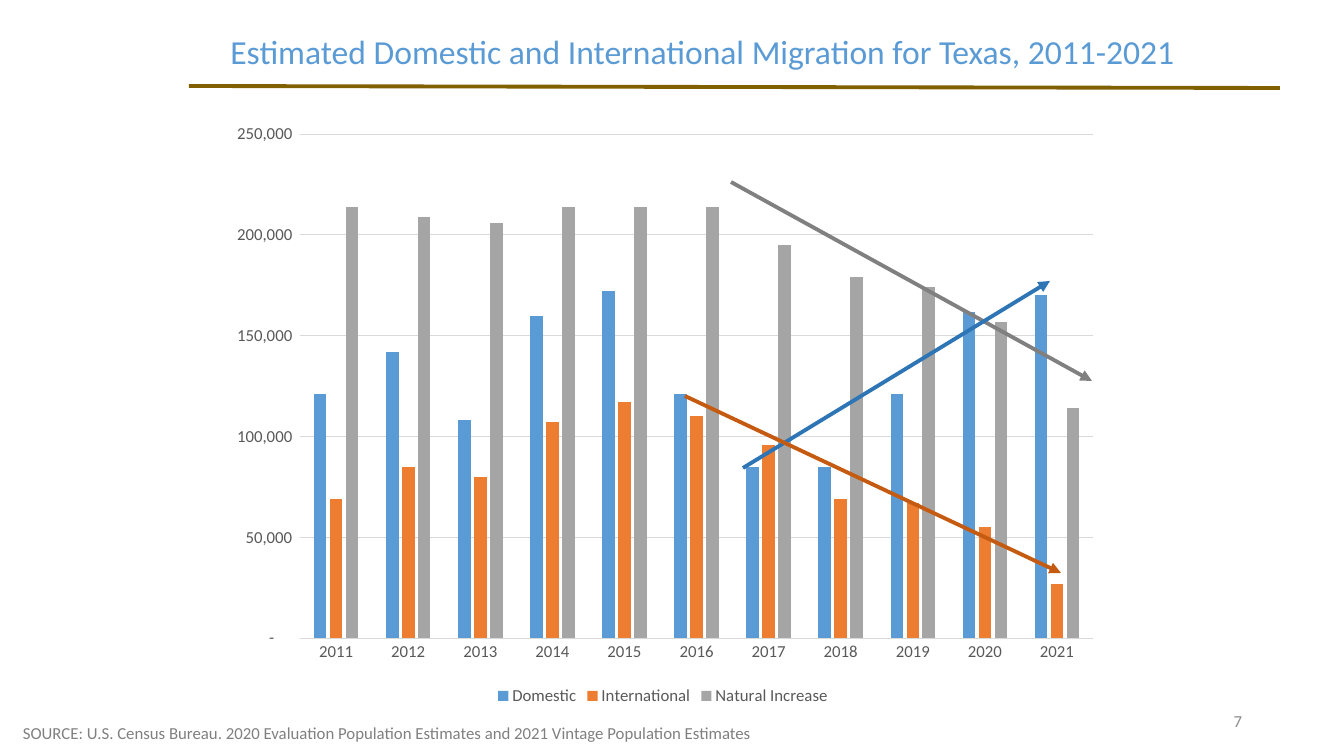
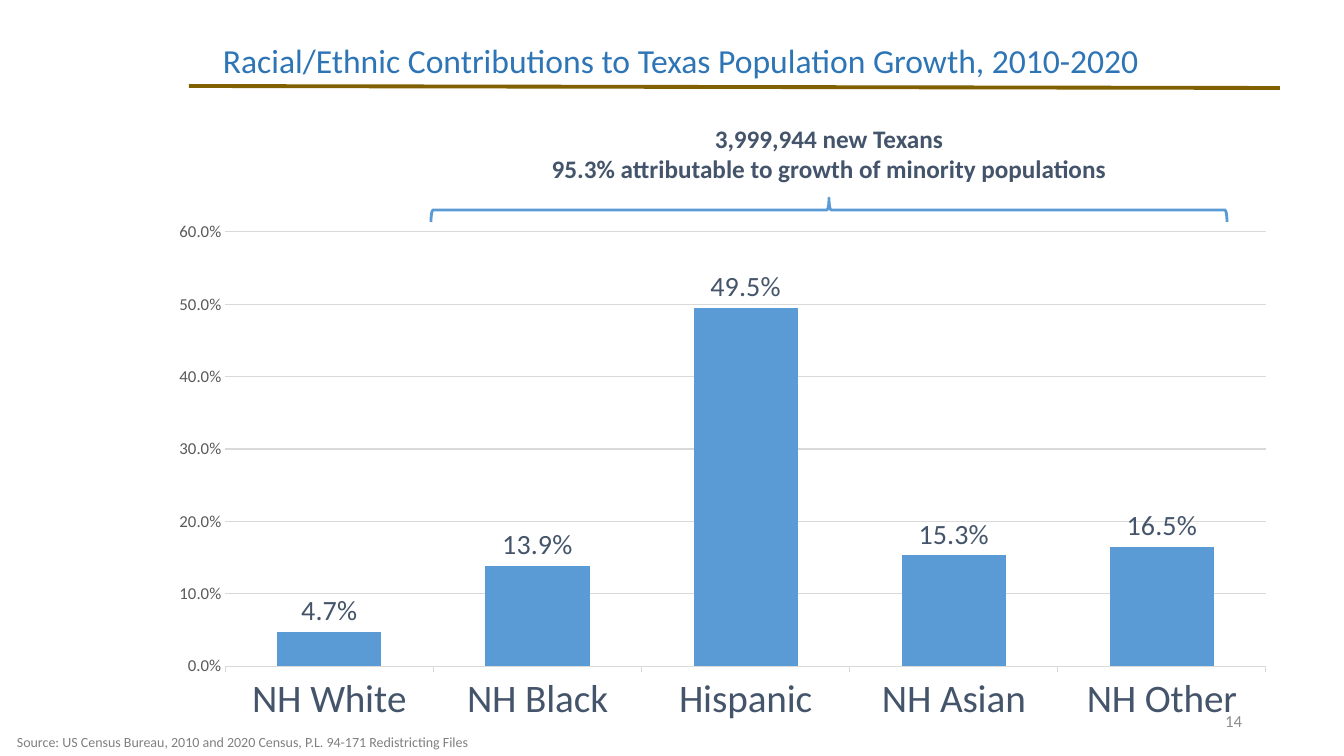
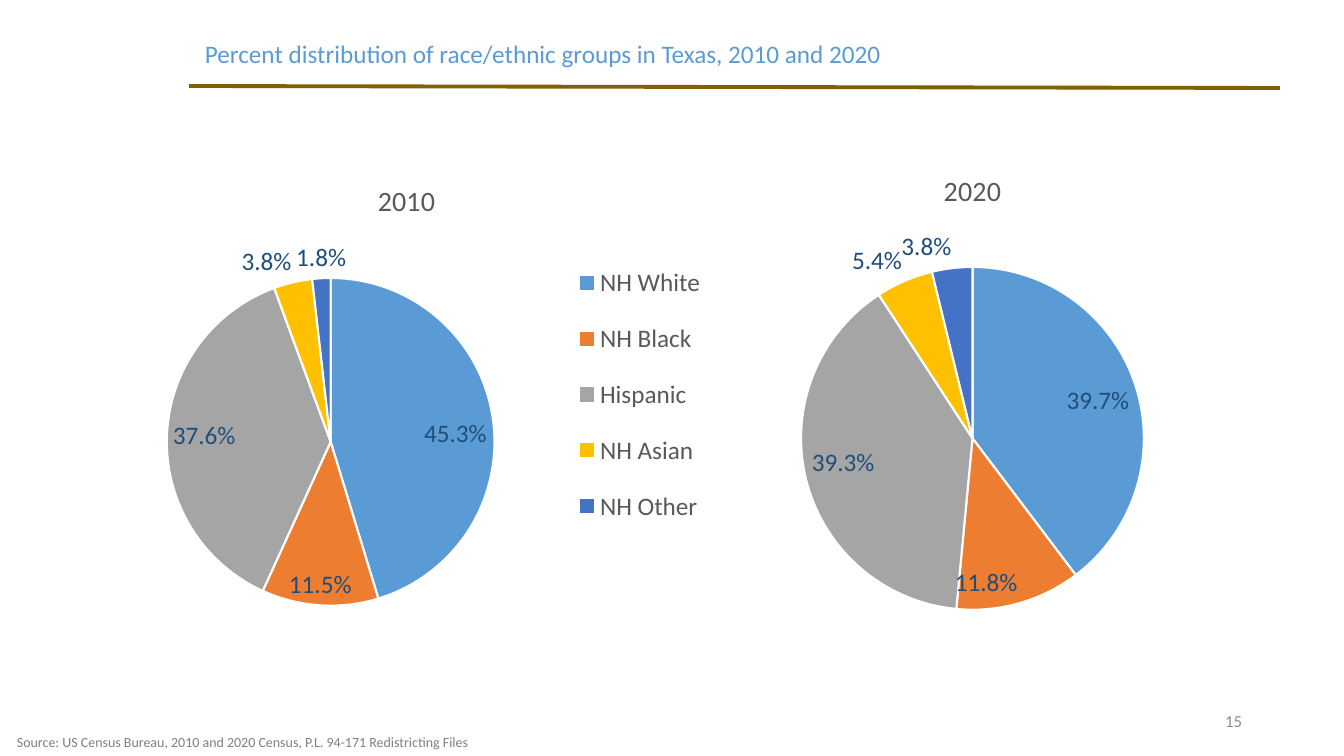
from lxml import etree
from pptx import Presentation
from pptx.chart.data import CategoryChartData
from pptx.dml.color import RGBColor
from pptx.enum.chart import XL_CHART_TYPE as CT, XL_LABEL_POSITION as LP
from pptx.enum.chart import XL_LEGEND_POSITION as LEG, XL_TICK_MARK as TICK
from pptx.enum.shapes import MSO_CONNECTOR, MSO_SHAPE
from pptx.enum.text import MSO_ANCHOR, PP_ALIGN
from pptx.oxml.ns import qn
from pptx.util import Pt

# Scale and theme
W, H = 1344, 756
EMU = 12192000 / W
FONT = "Calibri"
WHITE = RGBColor(0xFF, 0xFF, 0xFF)
BLUE = RGBColor(0x5B, 0x9B, 0xD5)
ORANGE = RGBColor(0xED, 0x7D, 0x31)
GRAY = RGBColor(0xA5, 0xA5, 0xA5)
YELLOW = RGBColor(0xFF, 0xC0, 0x00)
INDIGO = RGBColor(0x44, 0x72, 0xC4)
DEEP_BLUE = RGBColor(0x2E, 0x75, 0xB6)
NAVY = RGBColor(0x1F, 0x4E, 0x79)
RUST = RGBColor(0xC5, 0x5A, 0x11)
OLIVE = RGBColor(0x80, 0x60, 0x00)
SLATE = RGBColor(0x44, 0x54, 0x6A)
INK = RGBColor(0x59, 0x59, 0x59)
NOTE = RGBColor(0x80, 0x80, 0x80)
NUMBER = RGBColor(0x8C, 0x8C, 0x8C)
GRID = RGBColor(0xD9, 0xD9, 0xD9)

# Content
YEARS = [str(y) for y in range(2011, 2022)]
MIGRATION = [
    ("Domestic", BLUE, [121000, 142000, 108000, 160000, 172000, 121000,
                        85000, 85000, 121000, 162000, 170000]),
    ("International", ORANGE, [69000, 85000, 80000, 107000, 117000, 110000,
                               96000, 69000, 67000, 55000, 27000]),
    ("Natural Increase", GRAY, [214000, 209000, 206000, 214000, 214000, 214000,
                                195000, 179000, 174000, 157000, 114000]),
]
TRENDS = [((731, 182), (1092, 381), NOTE),
          ((743, 468), (1050, 281), DEEP_BLUE),
          ((685, 396), (1061, 573), RUST)]
GROUPS = ["NH White", "NH Black", "Hispanic", "NH Asian", "NH Other"]
GROUP_COLORS = [BLUE, ORANGE, GRAY, YELLOW, INDIGO]
GROWTH = [("Share of growth", BLUE, [0.047, 0.139, 0.495, 0.153, 0.165])]
# year, shares, chart box, pie box
PIES = [
    ("2010", [0.453, 0.115, 0.376, 0.038, 0.018], (92, 161, 629, 495), (167, 278, 328, 328)),
    ("2020", [0.397, 0.118, 0.393, 0.054, 0.038], (680, 150, 585, 506), (801, 267, 343, 343)),
]
PIE_LEGEND = (565, 242, 150, 305)
CALLOUT = ["3,999,944 new Texans",
           "95.3% attributable to growth of minority populations"]
CENSUS = "Source: US Census Bureau, 2010 and 2020 Census, P.L. 94-171 Redistricting Files"
VINTAGE = ("SOURCE: U.S. Census Bureau. 2020 Evaluation Population Estimates "
           "and 2021 Vintage Population Estimates")
COUNT = '_(* #,##0_);_(* \\(#,##0\\);_(* "-"??_);_(@_)'
PERCENT = "0.0%"


def px(*lengths):
    return [round(n * EMU) for n in lengths]


def set_font(font, size, color, bold=False):
    font.name, font.size, font.bold = FONT, Pt(size), bold
    font.color.rgb = color


def text(s, box, lines, size, color, align=PP_ALIGN.LEFT, bold=False,
         spacing=None, anchor=MSO_ANCHOR.TOP):
    tf = s.shapes.add_textbox(*px(*box)).text_frame
    tf.word_wrap, tf.vertical_anchor = True, anchor
    for i, line in enumerate(lines):
        p = tf.add_paragraph() if i else tf.paragraphs[0]
        p.alignment, p.line_spacing = align, spacing
        r = p.add_run()
        r.text = line
        set_font(r.font, size, color, bold)


def line(s, start, end, color, arrow=False):
    c = s.shapes.add_connector(MSO_CONNECTOR.STRAIGHT, *px(*start, *end))
    c.line.color.rgb, c.line.width = color, Pt(2.75)
    if arrow:
        etree.SubElement(c.line._get_or_add_ln(), qn("a:tailEnd"), type="triangle")
    etree.SubElement(c._element.spPr, qn("a:effectLst"))


def new_slide(prs, title, title_box, size, color, number, source, source_box,
              align=PP_ALIGN.LEFT):
    s = prs.slides.add_slide(prs.slide_layouts[6])
    line(s, (189, 86), (1280, 88), OLIVE)
    text(s, title_box, [title], size, color, align, spacing=0.9)
    text(s, source_box, [source], 12 if source == VINTAGE else 10, NOTE)
    text(s, (950, 701, 302, 40), [number], 12, NUMBER, PP_ALIGN.RIGHT,
         anchor=MSO_ANCHOR.MIDDLE)
    return s


# Charts
def layout(box, chart_box, inner):
    """Manual layout: box as a share of the chart frame."""
    x, y, w, h = chart_box
    shares = {"x": (box[0] - x) / w, "y": (box[1] - y) / h,
              "w": box[2] / w, "h": box[3] / h}
    root = etree.Element(qn("c:layout"))
    manual = etree.SubElement(root, qn("c:manualLayout"))
    if inner:
        etree.SubElement(manual, qn("c:layoutTarget"), val="inner")
    for key in "xy":
        etree.SubElement(manual, qn(f"c:{key}Mode"), val="edge")
    for key, share in shares.items():
        etree.SubElement(manual, qn(f"c:{key}"), val=f"{share:.3f}")
    return root


def add_chart(s, kind, box, plot_box, cats, series, fmt):
    data = CategoryChartData(number_format=fmt)
    data.categories = cats
    for name, values in series:
        data.add_series(name, values)
    chart = s.shapes.add_chart(kind, *px(*box), data).chart
    set_font(chart.font, 12, INK)
    chart.has_title = chart.has_legend = False
    area = chart._chartSpace.chart.plotArea
    for old in area.findall(qn("c:layout")):
        area.remove(old)
    area.insert(0, layout(plot_box, box, True))
    return chart


def add_legend(chart, position, size):
    chart.has_legend = True
    chart.legend.position = position
    chart.legend.include_in_layout = False
    set_font(chart.legend.font, size, INK)


def add_labels(plot, size, color, position):
    plot.has_data_labels = True
    labels = plot.data_labels
    labels.show_value, labels.position = True, position
    labels.number_format, labels.number_format_is_linked = PERCENT, False
    set_font(labels.font, size, color)


def add_columns(s, box, plot_box, cats, series, fmt, top, step, gap, overlap,
                cat_size, cat_color, tick):
    chart = add_chart(s, CT.COLUMN_CLUSTERED, box, plot_box, cats,
                      [(name, values) for name, _, values in series], fmt)
    plot = chart.plots[0]
    plot.gap_width, plot.overlap, plot.vary_by_categories = gap, overlap, False
    for ser, (_, color, _) in zip(plot.series, series):
        ser.format.fill.solid()
        ser.format.fill.fore_color.rgb = color
    cat, val = chart.category_axis, chart.value_axis
    cat.major_tick_mark, val.major_tick_mark = tick, TICK.NONE
    val.minimum_scale, val.maximum_scale, val.major_unit = 0, top, step
    val.tick_labels.number_format = fmt
    val.tick_labels.number_format_is_linked = False
    set_font(cat.tick_labels.font, cat_size, cat_color)
    set_font(val.tick_labels.font, 12, INK)
    val.format.line.fill.background()
    for ln in (cat.format.line, val.major_gridlines.format.line):
        ln.color.rgb, ln.width = GRID, Pt(0.75)
    return chart


def add_pie(s, year, shares, box, pie_box):
    chart = add_chart(s, CT.PIE, box, pie_box, GROUPS, [(year, shares)], PERCENT)
    chart.has_title = True
    r = chart.chart_title.text_frame.paragraphs[0].add_run()
    r.text = year
    set_font(r.font, 20, INK)
    plot = chart.plots[0]
    plot.vary_by_categories = True
    ser = plot.series[0]
    labels = ser.data_labels
    labels.show_value, labels.position = True, LP.INSIDE_END
    labels.number_format, labels.number_format_is_linked = PERCENT, False
    set_font(labels.font, 18, NAVY)
    for i, (share, color) in enumerate(zip(shares, GROUP_COLORS)):
        point = ser.points[i]
        point.format.fill.solid()
        point.format.fill.fore_color.rgb = color
        point.format.line.color.rgb = WHITE
        point.format.line.width = Pt(1.5)
        if share < 0.1:  # narrow slices carry the label outside
            set_font(point.data_label.font, 18, NAVY)
            point.data_label.position = LP.OUTSIDE_END
    return chart


# Slides
def migration_slide(prs):
    s = new_slide(prs, "Estimated Domestic and International Migration for Texas, 2011-2021",
                  (181, 30, 1043, 74), 24, BLUE, "7", VINTAGE,
                  (13, 718, 882, 30), PP_ALIGN.CENTER)
    chart = add_columns(s, (215, 112, 896, 598), (300, 134, 793, 504), YEARS,
                        MIGRATION, COUNT, 250000, 50000, 219, -27, 12, INK, TICK.NONE)
    add_legend(chart, LEG.BOTTOM, 12)
    for start, end, color in TRENDS:
        line(s, start, end, color, arrow=True)


def growth_slide(prs):
    s = new_slide(prs, "Racial/Ethnic Contributions to Texas Population Growth, 2010-2020",
                  (213, 39, 960, 46), 24, DEEP_BLUE, "14", CENSUS, (7, 729, 500, 27))
    chart = add_columns(s, (152, 222, 1145, 501), (225, 231, 1041, 437), GROUPS,
                        GROWTH, PERCENT, 0.6, 0.1, 100, 0, 28, SLATE, TICK.OUTSIDE)
    add_labels(chart.plots[0], 20, SLATE, LP.OUTSIDE_END)
    text(s, (418, 118, 822, 72), CALLOUT, 18, SLATE, PP_ALIGN.CENTER, bold=True)
    # Brace over the minority groups, turned a quarter about its centre
    x, y, span, depth = 431, 198, 796, 24
    shift = (span - depth) / 2
    brace = s.shapes.add_shape(MSO_SHAPE.LEFT_BRACE,
                               *px(x + shift, y - shift, depth, span))
    brace.rotation = 90
    brace.shadow.inherit = False
    brace.fill.background()
    brace.line.color.rgb, brace.line.width = BLUE, Pt(2)


def distribution_slide(prs):
    s = new_slide(prs, "Percent distribution of race/ethnic groups in Texas, 2010 and 2020",
                  (195, 37, 906, 37), 18, BLUE, "15", CENSUS, (7, 729, 500, 27))
    charts = [add_pie(s, *pie) for pie in PIES]
    add_legend(charts[0], LEG.RIGHT, 18)
    position = charts[0].legend._element.find(qn("c:legendPos"))
    position.addnext(layout(PIE_LEGEND, PIES[0][2], False))


def main():
    prs = Presentation()
    prs.slide_width, prs.slide_height = px(W, H)
    migration_slide(prs)
    growth_slide(prs)
    distribution_slide(prs)
    prs.save("out.pptx")


if __name__ == "__main__":
    main()
